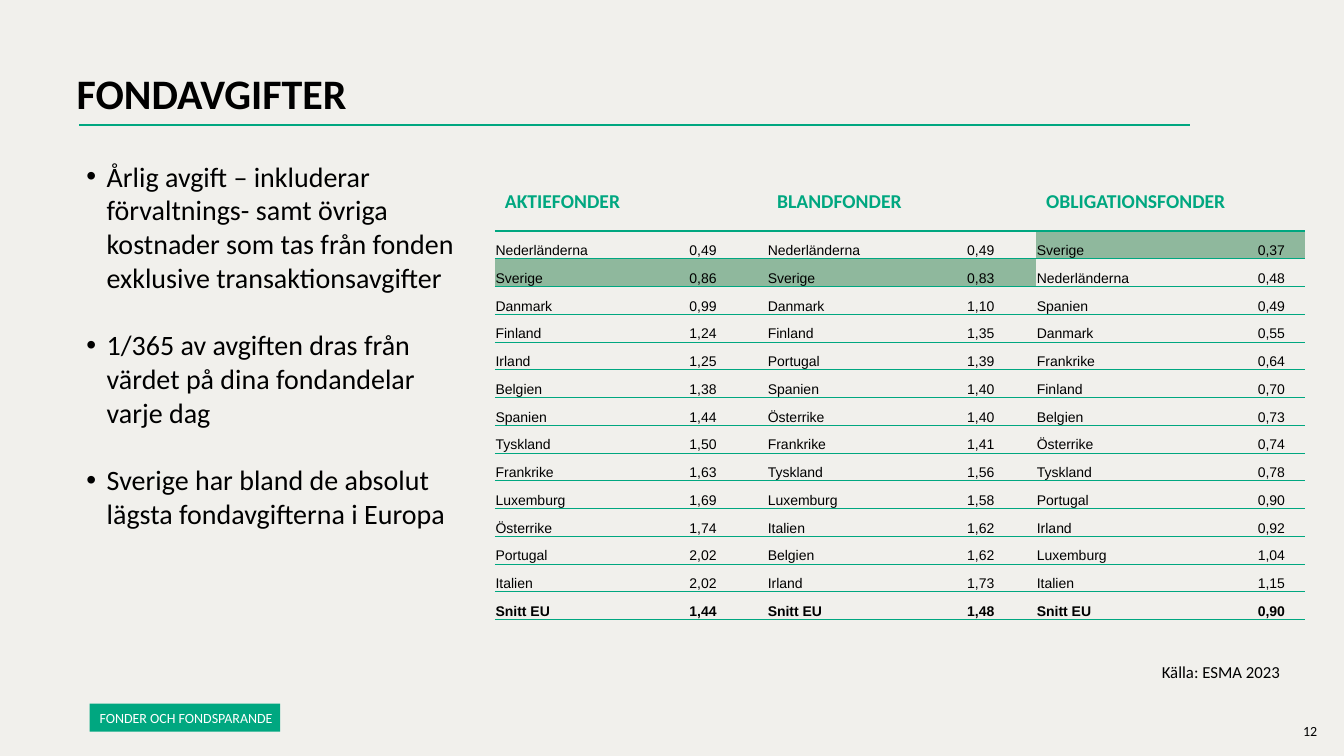
"""Build the slide about fund fees in Europe."""
from lxml.etree import SubElement
from pptx import Presentation
from pptx.dml.color import RGBColor
from pptx.enum.shapes import MSO_CONNECTOR, MSO_SHAPE
from pptx.enum.text import MSO_ANCHOR, PP_ALIGN
from pptx.oxml.ns import qn
from pptx.util import Cm, Pt

BACKGROUND = RGBColor(0xF1, 0xF0, 0xEC)
GREEN = RGBColor(0x00, 0xA7, 0x80)
HIGHLIGHT = RGBColor(0x8F, 0xB8, 0x9D)
BLACK = RGBColor(0, 0, 0)
WHITE = RGBColor(0xFF, 0xFF, 0xFF)
PLAIN_TABLE = "{2D5ABB26-0587-4C30-8999-92F81FD0307C}"

TITLE = "FONDAVGIFTER"
TAG = "FONDER OCH FONDSPARANDE"
SOURCE = "Källa: ESMA 2023"
PAGE_NUMBER = "12"
BULLETS = [
    "Årlig avgift – inkluderar förvaltnings- samt övriga kostnader som tas från fonden "
    "exklusive transaktionsavgifter",
    "1/365 av avgiften dras från värdet på dina fondandelar varje dag",
    "Sverige har bland de absolut lägsta fondavgifterna i Europa",
]
FEES = {
    "AKTIEFONDER": [
        ("Nederländerna", "0,49"), ("Sverige", "0,86"), ("Danmark", "0,99"),
        ("Finland", "1,24"), ("Irland", "1,25"), ("Belgien", "1,38"),
        ("Spanien", "1,44"), ("Tyskland", "1,50"), ("Frankrike", "1,63"),
        ("Luxemburg", "1,69"), ("Österrike", "1,74"), ("Portugal", "2,02"),
        ("Italien", "2,02"), ("Snitt EU", "1,44"),
    ],
    "BLANDFONDER": [
        ("Nederländerna", "0,49"), ("Sverige", "0,83"), ("Danmark", "1,10"),
        ("Finland", "1,35"), ("Portugal", "1,39"), ("Spanien", "1,40"),
        ("Österrike", "1,40"), ("Frankrike", "1,41"), ("Tyskland", "1,56"),
        ("Luxemburg", "1,58"), ("Italien", "1,62"), ("Belgien", "1,62"),
        ("Irland", "1,73"), ("Snitt EU", "1,48"),
    ],
    "OBLIGATIONSFONDER": [
        ("Sverige", "0,37"), ("Nederländerna", "0,48"), ("Spanien", "0,49"),
        ("Danmark", "0,55"), ("Frankrike", "0,64"), ("Finland", "0,70"),
        ("Belgien", "0,73"), ("Österrike", "0,74"), ("Tyskland", "0,78"),
        ("Portugal", "0,90"), ("Irland", "0,92"), ("Luxemburg", "1,04"),
        ("Italien", "1,15"), ("Snitt EU", "0,90"),
    ],
}
COLUMN_WIDTHS = [3.63, 3.23, 3.99, 2.79, 5.08, 1.7]
HEADER_HEIGHT, ROW_HEIGHT = 1.17, 0.7


def add_span(para, text, size, color=BLACK, bold=False, font="Calibri"):
    span = para.add_run()
    span.text = text
    span.font.name = font
    span.font.size = Pt(size)
    span.font.bold = bold
    span.font.color.rgb = color


def add_box(page, left, top, width, height):
    box = page.shapes.add_textbox(Cm(left), Cm(top), Cm(width), Cm(height))
    box.text_frame.word_wrap = True
    return box.text_frame


def add_border(cell, edge, points):
    line = SubElement(cell._tc.get_or_add_tcPr(), qn(f"a:{edge}"), w=str(Pt(points)))
    fill = SubElement(line, qn("a:solidFill"))
    SubElement(fill, qn("a:srgbClr"), val=str(GREEN))


def add_bullets(page):
    frame = add_box(page, 1.93, 3.89, 9.83, 11.73)
    for index, text in enumerate(BULLETS):
        para = frame.paragraphs[0] if index == 0 else frame.add_paragraph()
        properties = para._p.get_or_add_pPr()
        properties.set("marL", str(Cm(0.51)))
        properties.set("indent", str(Cm(-0.51)))
        SubElement(properties, qn("a:buFont"), typeface="Arial")
        SubElement(properties, qn("a:buChar"), char="•")
        if index:
            para.space_before = Pt(24.4)
        add_span(para, text, 20)


def fill_cell(cell, text, country, centered):
    cell.margin_left = cell.margin_right = cell.margin_top = Cm(0.02)
    cell.margin_bottom = 0
    cell.vertical_anchor = MSO_ANCHOR.BOTTOM
    add_border(cell, "lnB", 0.5)
    if country == "Sverige":
        cell.fill.solid()
        cell.fill.fore_color.rgb = HIGHLIGHT
    else:
        cell.fill.background()
    para = cell.text_frame.paragraphs[0]
    para.alignment = PP_ALIGN.CENTER if centered else PP_ALIGN.LEFT
    add_span(para, text, 10, bold=country == "Snitt EU", font="Arial")


def add_fee_table(page):
    row_count = len(FEES["AKTIEFONDER"])
    frame = page.shapes.add_table(
        row_count + 1, len(COLUMN_WIDTHS), Cm(12.47), Cm(4.65),
        Cm(sum(COLUMN_WIDTHS)), Cm(HEADER_HEIGHT + row_count * ROW_HEIGHT))
    table = frame.table
    table.first_row = table.horz_banding = False
    table._tbl.tblPr.find(qn("a:tableStyleId")).text = PLAIN_TABLE
    for column, width in zip(table.columns, COLUMN_WIDTHS):
        column.width = Cm(width)
    for index, row in enumerate(table.rows):
        row.height = Cm(ROW_HEIGHT if index else HEADER_HEIGHT)
    for cell in table.rows[0].cells:
        add_border(cell, "lnB", 1)
        cell.fill.background()
    for group, (heading, fees) in enumerate(FEES.items()):
        first = 2 * group
        add_span(table.cell(0, first).text_frame.paragraphs[0], heading, 14, GREEN, True)
        for row, entry in enumerate(fees, 1):
            for offset, text in enumerate(entry):
                cell = table.cell(row, first + offset)
                if row == 1:
                    add_border(cell, "lnT", 1)
                fill_cell(cell, text, entry[0], offset == 1)


def add_title(page):
    rule = page.shapes.add_connector(
        MSO_CONNECTOR.STRAIGHT, Cm(2), Cm(3.15), Cm(30), Cm(3.15))
    rule.line.color.rgb = GREEN
    rule.line.width = Pt(1.5)
    SubElement(rule._element.spPr, qn("a:effectLst"))
    para = add_box(page, 1.68, 1.73, 31.01, 3.68).paragraphs[0]
    para.line_spacing = 0.9
    add_span(para, TITLE, 30, bold=True)


def add_tag(page):
    tag = page.shapes.add_shape(
        MSO_SHAPE.RECTANGLE, Cm(2.26), Cm(17.73), Cm(4.8), Cm(0.71))
    tag.shadow.inherit = False
    tag.fill.solid()
    tag.fill.fore_color.rgb = GREEN
    tag.line.fill.background()
    frame = tag.text_frame
    frame.word_wrap = False
    frame.vertical_anchor = MSO_ANCHOR.MIDDLE
    frame.margin_left, frame.margin_top = Cm(0.25), Cm(0.2)
    frame.margin_right, frame.margin_bottom = Cm(0.1), Cm(0.13)
    para = frame.paragraphs[0]
    para.alignment = PP_ALIGN.LEFT
    para.line_spacing = 0.9
    add_span(para, TAG, 10, WHITE)


def main():
    deck = Presentation()
    deck.slide_width, deck.slide_height = Cm(33.87), Cm(19.05)
    page = deck.slides.add_slide(deck.slide_layouts[6])
    page.background.fill.solid()
    page.background.fill.fore_color.rgb = BACKGROUND
    add_span(add_box(page, 32.59, 18.08, 1.02, 0.69).paragraphs[0], PAGE_NUMBER, 10)
    add_title(page)
    add_tag(page)
    add_bullets(page)
    add_span(add_box(page, 29.03, 16.56, 3.63, 0.76).paragraphs[0], SOURCE, 12)
    add_fee_table(page)
    deck.save("out.pptx")


if __name__ == "__main__":
    main()
